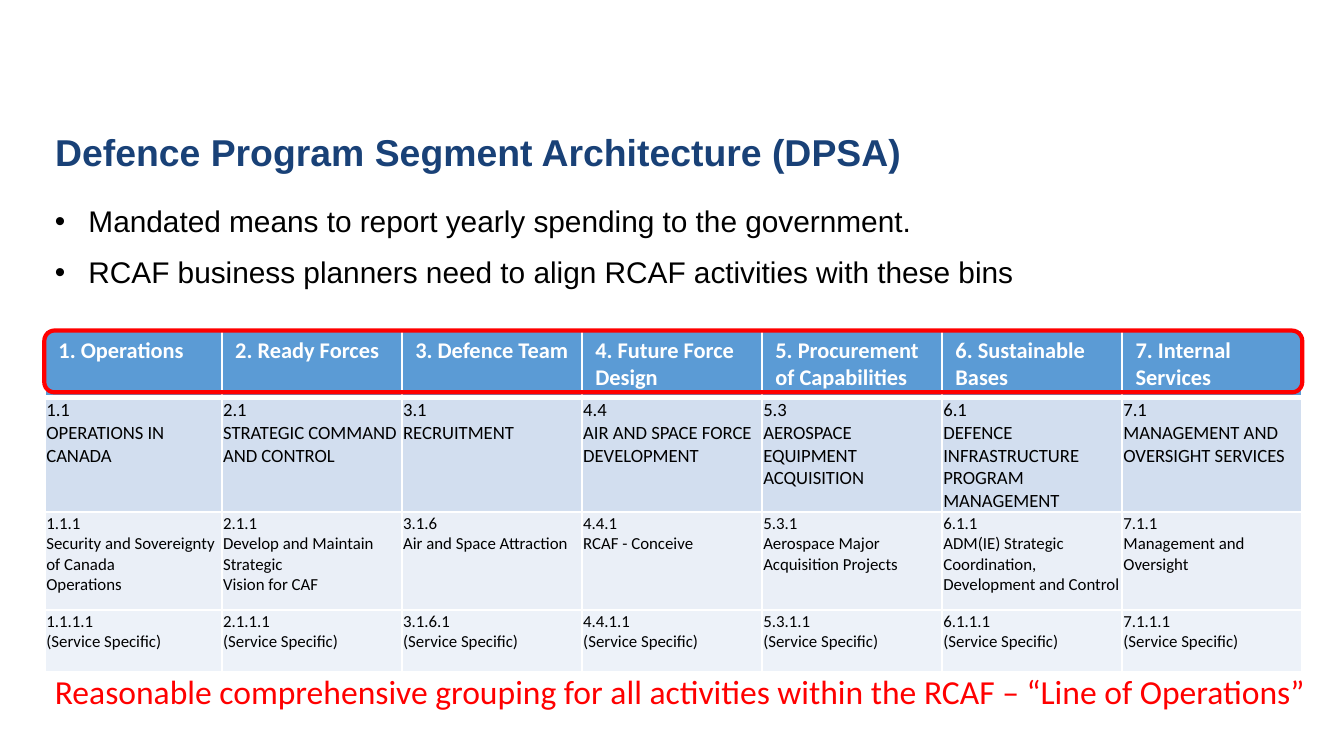
import copy
from dataclasses import dataclass

import pptx
import pptx.dml.color
import pptx.enum.shapes
import pptx.enum.text
import pptx.oxml
import pptx.oxml.ns
import pptx.util

PX = 4572  # EMU per px, 200 px to the inch
ANCHOR = pptx.enum.text.MSO_ANCHOR
FIT = pptx.enum.text.MSO_AUTO_SIZE


@dataclass(frozen=True)
class Theme:
    heading: str = "Arial"
    detail: str = "Calibri"
    navy: str = "194177"
    black: str = "000000"
    white: str = "FFFFFF"
    red: str = "FF0000"
    row_fills: tuple = ("5B9BD5", "D2DEEF", "EAEFF7", "EDF2F9")
    row_sizes: tuple = (12, 10, 9, 9)
    title_size: int = 20
    bullet_size: int = 16
    conclusion_size: int = 18


THEME = Theme()

BULLETS = (
    "Mandated means to report yearly spending to the government.",
    "RCAF business planners need to align RCAF activities with these bins",
)

# Core responsibility, program number and name, sub-program number and name
SEGMENTS = (
    ("Operations", "1.1", "OPERATIONS IN CANADA",
     "1.1.1", "Security and Sovereignty of Canada\nOperations"),
    ("Ready Forces", "2.1", "STRATEGIC COMMAND AND CONTROL",
     "2.1.1", "Develop and Maintain Strategic\nVision for CAF"),
    ("Defence Team", "3.1", "RECRUITMENT",
     "3.1.6", "Air and Space Attraction"),
    ("Future Force Design", "4.4", "AIR AND SPACE FORCE DEVELOPMENT",
     "4.4.1", "RCAF - Conceive"),
    ("Procurement of Capabilities", "5.3", "AEROSPACE EQUIPMENT ACQUISITION",
     "5.3.1", "Aerospace Major Acquisition Projects"),
    ("Sustainable Bases", "6.1", "DEFENCE INFRASTRUCTURE PROGRAM MANAGEMENT",
     "6.1.1", "ADM(IE) Strategic Coordination,\nDevelopment and Control"),
    ("Internal Services", "7.1", "MANAGEMENT AND OVERSIGHT SERVICES",
     "7.1.1", "Management and Oversight"),
)


def emu(*lengths):
    return [pptx.util.Emu(length * PX) for length in lengths]


def rgb(colour):
    return pptx.dml.color.RGBColor.from_string(colour)


def apply(target, formats):
    for name, value in formats.items():
        setattr(target, name, value)


def write(paragraph, text, font, size, colour, bold=False):
    paragraph.text = text
    for run in paragraph.runs:
        apply(run.font, {"name": font, "size": pptx.util.Pt(size), "bold": bold})
        run.font.color.rgb = rgb(colour)
    # Line breaks take the size of the text around them
    for line_break in paragraph._p.findall(pptx.oxml.ns.qn("a:br")):
        line_break.append(copy.deepcopy(paragraph.runs[0]._r.rPr))


def add_title(slide, box):
    title = slide.shapes.title
    apply(title, dict(zip(("left", "top", "width", "height"), emu(*box))))
    apply(title.text_frame, {"word_wrap": True, "auto_size": FIT.NONE,
                             "vertical_anchor": ANCHOR.MIDDLE})
    paragraph = title.text_frame.paragraphs[0]
    apply(paragraph, {"alignment": pptx.enum.text.PP_ALIGN.LEFT, "line_spacing": 0.9})
    write(paragraph, "Defence Program Segment Architecture (DPSA)",
          THEME.heading, THEME.title_size, THEME.navy, True)


def add_bullets(slide, box):
    frame = slide.shapes.add_textbox(*emu(*box)).text_frame
    frame.word_wrap = True
    for index, text in enumerate(BULLETS):
        paragraph = frame.add_paragraph() if index else frame.paragraphs[0]
        properties = paragraph._p.get_or_add_pPr()
        indent, = emu(50)
        properties.set("marL", str(indent))
        properties.set("indent", str(-indent))
        for tag, key, value in (("buFont", "typeface", THEME.heading),
                                ("buChar", "char", "•")):
            element = pptx.oxml.parse_xml(
                f'<a:{tag} {pptx.oxml.ns.nsdecls("a")} {key}="{value}"/>')
            properties.append(element)
        apply(paragraph, {"line_spacing": 0.9,
                          "space_before": pptx.util.Pt(10 if index else 0)})
        write(paragraph, text, THEME.heading, THEME.bullet_size, THEME.black)


def set_borders(cell, widths):
    properties = cell._tc.get_or_add_tcPr()
    for index, (side, points) in enumerate(widths.items()):
        properties.insert(index, pptx.oxml.parse_xml(
            f'<a:ln{side} {pptx.oxml.ns.nsdecls("a")} w="{pptx.util.Pt(points)}">'
            f'<a:solidFill><a:srgbClr val="{THEME.white}"/></a:solidFill></a:ln{side}>'))


def segment_texts(number, segment):
    name, program, program_name, sub_program, sub_name = segment
    return (f"{number}. {name}",
            f"{program} \n{program_name}",
            f"{sub_program} \n{sub_name}",
            f"{sub_program}.1 \n(Service Specific)")


def add_segment_table(slide, box):
    row_heights = (98, 170, 146, 92)
    segments = slide.shapes.add_table(len(row_heights), len(SEGMENTS), *emu(*box)).table
    for row, height in zip(segments.rows, emu(*row_heights)):
        row.height = height
    # The first column is slightly narrower than the rest
    for column, width in zip(segments.columns, emu(263, *[268] * 6)):
        column.width = width
    edge, = emu(2)
    tight = {"margin_left": edge, "margin_right": edge,
             "margin_top": edge, "margin_bottom": 0}
    for column, segment in enumerate(SEGMENTS):
        for row, text in enumerate(segment_texts(column + 1, segment)):
            cell = segments.cell(row, column)
            header = row == 0
            if not header:
                apply(cell, tight)
            cell.fill.solid()
            cell.fill.fore_color.rgb = rgb(THEME.row_fills[row])
            set_borders(cell, {"L": 1, "R": 1, "T": 3 if row == 1 else 1,
                               "B": 3 if header else 1})
            write(cell.text_frame.paragraphs[0], text, THEME.detail,
                  THEME.row_sizes[row], THEME.white if header else THEME.black, header)


def add_header_outline(slide, box):
    outline = slide.shapes.add_shape(
        pptx.enum.shapes.MSO_SHAPE.ROUNDED_RECTANGLE, *emu(*box))
    outline.shadow.inherit = False
    outline.fill.background()
    outline.line.color.rgb = rgb(THEME.red)
    outline.line.width = pptx.util.Pt(2.25)


def add_conclusion(slide, box):
    frame = slide.shapes.add_textbox(*emu(*box)).text_frame
    apply(frame, {"word_wrap": False, "auto_size": FIT.SHAPE_TO_FIT_TEXT})
    write(frame.paragraphs[0],
          "Reasonable comprehensive grouping for all activities within the RCAF"
          " – “Line of Operations”",
          THEME.detail, THEME.conclusion_size, THEME.red)


def main():
    deck = pptx.Presentation()
    deck.slide_width, deck.slide_height = emu(2000, 1125)
    slide = deck.slides.add_slide(deck.slide_layouts[5])
    add_bullets(slide, (62, 298, 1878, 738))
    add_title(slide, (62, 184, 1878, 92))
    add_segment_table(slide, (67, 492, 1871, 506))
    add_header_outline(slide, (66, 492, 1872, 92))
    add_conclusion(slide, (62, 988, 1936, 80))
    deck.save("out.pptx")


if __name__ == "__main__":
    main()
